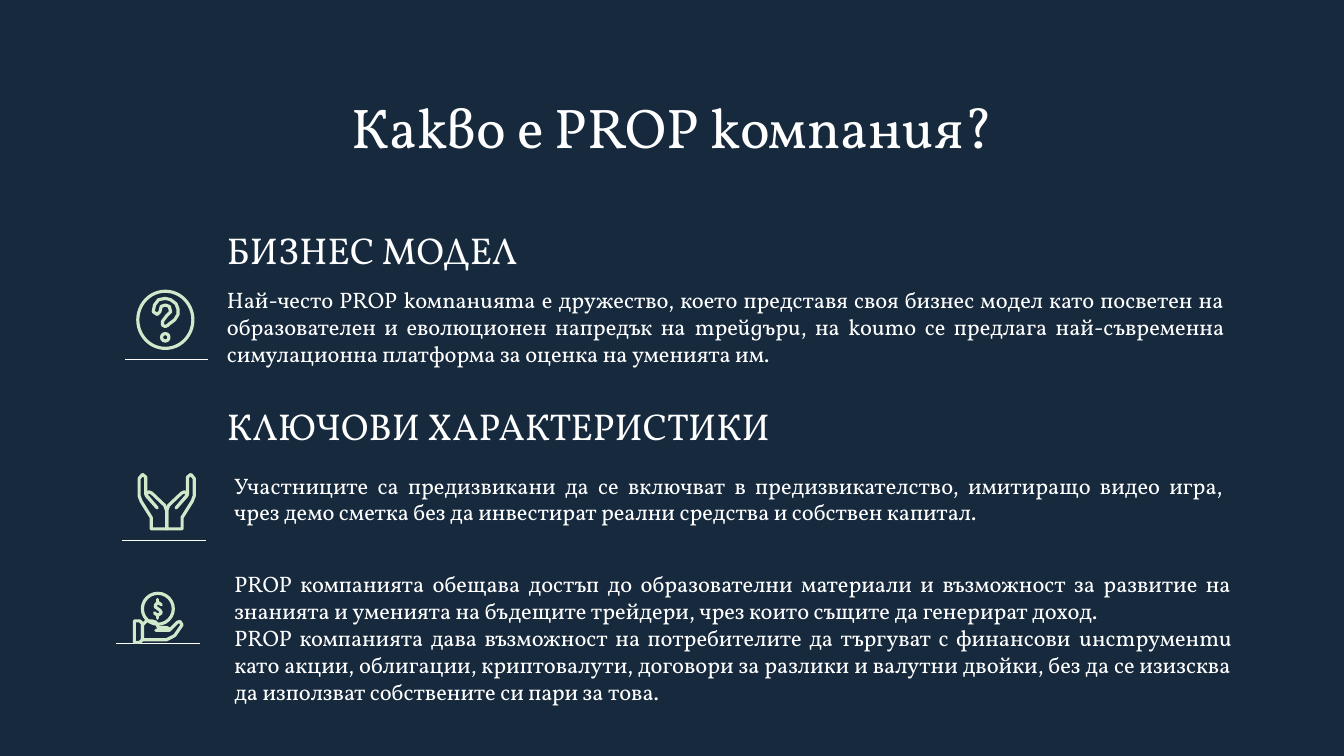
from lxml import etree
from pptx import Presentation
from pptx import util as u
from pptx.dml.color import RGBColor
from pptx.enum import lang, shapes, text
from pptx.oxml.ns import qn

COLORS = {"ground": "16293D", "ink": "FFFFFF", "icon": "D1E9CA"}
FONT = "Vollkorn"
CELL = u.Inches(0.1)  # the slide is a grid of 100 columns by 56.25 rows
COLUMNS, ROWS = 100, 56.25
STROKE = 1.7

# Text: left, top, width, height in cells; words between bars get Bulgarian letterforms
TITLE = "|Какво е PROP компания?|"
HEADINGS = [
    ((15.9, 16.25, 76.2, 5), "|БИЗНЕС МОДЕЛ|"),
    ((15.9, 29.35, 76.2, 5), "|КЛЮЧОВИ ХАРАКТЕРИСТИКИ|"),
]
BODIES = [
    ((15.9, 20.3, 76.2, 5.5), [
        "Най-често PROP |компанията| е дружество, което представя своя бизнес модел като "
        "посветен на образователен и еволюционен напредък на |трейдъри|, на |които| се "
        "предлага най-съвременна симулационна платформа за оценка на уменията им."]),
    ((16.45, 34.1, 75.6, 7.7), [
        "Участниците са предизвикани да се включват в предизвикателство, имитиращо видео "
        "игра, чрез демо сметка без да инвестират реални средства и собствен капитал."]),
    ((16.45, 41.45, 76.2, 14.1), [
        "PROP компанията обещава достъп до образователни материали и възможност за развитие "
        "на знанията и уменията на бъдещите трейдери, чрез които същите да генерират доход.",
        "PROP компанията дава възможност на потребителите да търгуват с финансови "
        "|инструменти| като акции, облигации, криптовалути, договори за разлики и валутни "
        "двойки, без да се изизсква да използват собствените си пари за това."]),
]
RULES = [(9.3, 26.75), (9.1, 40.2), (8.65, 47.9)]
RULE_LENGTH = 6.2

# Icon outlines: points in cells
QUESTION_HOOK = [
    (12.3, 22.2), (12.7, 22.3), (13.1, 22.6), (13.25, 23), (13.25, 23.4), (13, 23.8),
    (12.6, 24.1), (12.5, 24.2), (12.3, 24.3), (12.1, 24.2), (12.1, 23.9), (12.4, 23.5),
    (12.7, 23.2), (12.6, 22.8), (12.3, 22.7), (12, 22.8), (11.9, 23.2), (11.7, 23.4),
    (11.4, 23.2), (11.5, 22.7), (11.8, 22.3)]
HANDS_AXIS = 12.4
LEFT_HAND = [
    (12.4, 39.35), (11.25, 39.35), (11.25, 38.5), (10.5, 37.3), (10.35, 36.9),
    (10.35, 35.6), (10.6, 35.3), (10.85, 35.5), (10.85, 36.8), (11.7, 37.8),
    (10.9, 36.9), (10.9, 36.7), (11.1, 36.6), (11.3, 36.7), (12.25, 37.6), (12.4, 38)]
CUFF = [(10, 46.2), (10.4, 46.2), (10.6, 46.4), (10.6, 47.6), (10.4, 47.8), (10, 47.8)]
PALM = [
    (10.6, 46.5), (10.9, 46.2), (11.3, 46.2), (11.6, 46.3), (11.8, 46.7), (12.4, 46.7),
    (12.6, 46.8), (12.4, 46.9), (11.6, 46.9), (12.6, 46.9), (13.2, 46.3), (13.4, 46.25),
    (13.55, 46.5), (13, 47.3), (12.4, 47.6), (10.6, 47.6)]
DOLLAR = [
    (12, 45), (11.8, 44.85), (11.6, 44.95), (11.55, 45.15), (11.75, 45.3), (11.9, 45.4),
    (12, 45.6), (11.8, 45.75), (11.6, 45.7), (11.5, 45.6)]
DOLLAR_BARS = [[(11.75, 44.6), (11.75, 44.8)], [(11.75, 45.8), (11.75, 46)]]


def cells(*values):
    return [u.Emu(round(value * CELL)) for value in values]


def color(name):
    return RGBColor.from_string(COLORS[name])


def add_spans(para, wording, size):
    for index, part in enumerate(wording.split("|")):
        if not part:
            continue
        span = para.add_run()
        span.text = part
        language = lang.MSO_LANGUAGE_ID.BULGARIAN if index % 2 else lang.MSO_LANGUAGE_ID.ENGLISH_US
        font_format = {"name": FONT, "size": u.Pt(size), "language_id": language}
        for name, value in font_format.items():
            setattr(span.font, name, value)
        span.font.color.rgb = color("ink")


def format_box(shape, paragraphs, size, anchor, alignment):
    frame = shape.text_frame
    frame_format = {"word_wrap": True, "auto_size": text.MSO_AUTO_SIZE.NONE,
                    "vertical_anchor": anchor}
    for side in ("left", "top", "right", "bottom"):
        frame_format["margin_" + side] = CELL
    for name, value in frame_format.items():
        setattr(frame, name, value)
    for index, wording in enumerate(paragraphs):
        para = frame.paragraphs[0] if index == 0 else frame.add_paragraph()
        para.alignment = alignment
        add_spans(para, wording, size)


def add_text(page, place, paragraphs, size, anchor, alignment):
    box = page.shapes.add_textbox(*cells(*place))
    format_box(box, paragraphs, size, anchor, alignment)


def add_title(page, wording):
    title = page.shapes.title
    title.left, title.top, title.width, title.height = cells(7.9, 5.9, 84.3, 6.3)
    format_box(title, [wording], 30, text.MSO_ANCHOR.TOP, text.PP_ALIGN.CENTER)


def add_rule(page, left, top):
    rule = page.shapes.add_connector(
        shapes.MSO_CONNECTOR.STRAIGHT, *cells(left, top, left + RULE_LENGTH, top))
    rule.line.color.rgb = color("ink")
    rule.line.width = u.Pt(0.75)
    etree.SubElement(rule._element.spPr, qn("a:effectLst"))


def format_stroke(shape):
    shape.shadow.inherit = False
    shape.fill.background()
    shape.line.color.rgb = color("icon")
    shape.line.width = u.Pt(STROKE)
    line = shape.line._get_or_add_ln()
    line.set("cap", "rnd")
    etree.SubElement(line, qn("a:round"))


def add_ring(page, center_x, center_y, width, height):
    ring = page.shapes.add_shape(
        shapes.MSO_SHAPE.OVAL,
        *cells(center_x - width / 2, center_y - height / 2, width, height))
    format_stroke(ring)


def add_outline(page, points, close=True):
    corners = [cells(*point) for point in points]
    builder = page.shapes.build_freeform(*corners[0])
    builder.add_line_segments(corners[1:], close=close)
    format_stroke(builder.convert_to_shape())


def add_question_icon(page):
    add_ring(page, 12.3, 23.8, 4.1, 4.25)
    add_outline(page, QUESTION_HOOK)
    add_ring(page, 12.3, 25.1, 0.55, 0.55)


def add_hands_icon(page):
    add_outline(page, LEFT_HAND)
    add_outline(page, [(2 * HANDS_AXIS - x, y) for x, y in LEFT_HAND])


def add_coin_icon(page):
    add_ring(page, 11.75, 45.3, 2.3, 2.3)
    for points in (CUFF, PALM):
        add_outline(page, points)
    for points in (DOLLAR, *DOLLAR_BARS):
        add_outline(page, points, close=False)


def main():
    deck = Presentation()
    deck.slide_width, deck.slide_height = cells(COLUMNS, ROWS)
    page = deck.slides.add_slide(deck.slide_layouts[5])
    page.background.fill.solid()
    page.background.fill.fore_color.rgb = color("ground")

    # Title, headings and body text
    add_title(page, TITLE)
    for place, wording in HEADINGS:
        add_text(page, place, [wording], 20, text.MSO_ANCHOR.BOTTOM, text.PP_ALIGN.LEFT)
    for place, paragraphs in BODIES:
        add_text(page, place, paragraphs, 12, text.MSO_ANCHOR.TOP, text.PP_ALIGN.JUSTIFY)

    # Rules and icons
    for left, top in RULES:
        add_rule(page, left, top)
    add_question_icon(page)
    add_hands_icon(page)
    add_coin_icon(page)

    deck.save("out.pptx")


if __name__ == "__main__":
    main()
